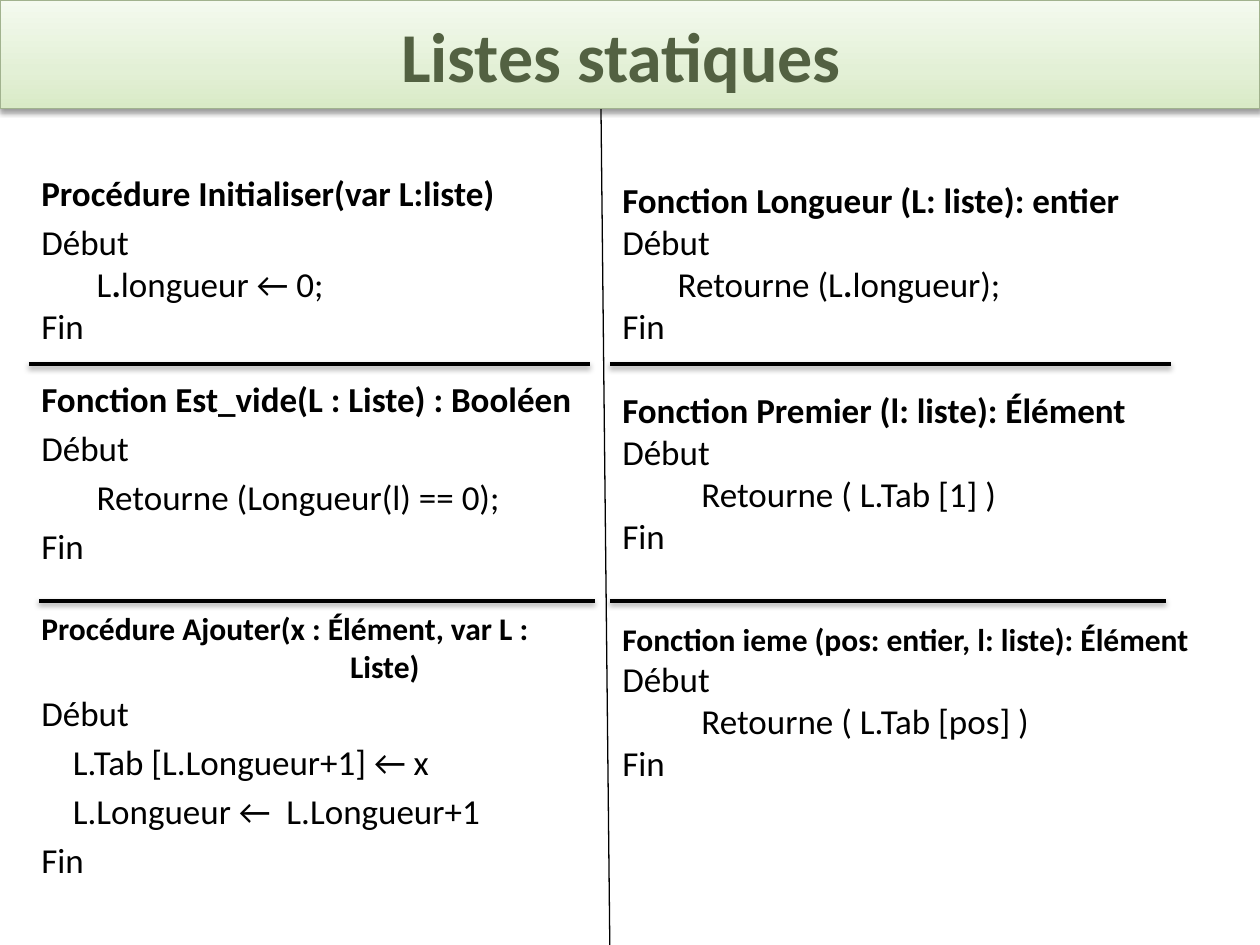
import pptx
import pptx.util
import pptx.dml.color
import pptx.enum.shapes
import pptx.enum.text
from lxml import etree

Inches, Pt = pptx.util.Inches, pptx.util.Pt
A = "http://schemas.openxmlformats.org/drawingml/2006/main"


def color(value):
    return pptx.dml.color.RGBColor.from_string(value)


def add_xml(parent, xml):
    parent.append(etree.fromstring(xml.replace(">", f' xmlns:a="{A}">', 1)))


def apply(target, values):
    for name, value in values.items():
        setattr(target, name, value)


class Deck:
    FONT = "Calibri"
    INK = "000000"
    HANG = 0.38
    SHADOW = (
        '<a:effectLst><a:outerShdw blurRad="39400" dist="20300" dir="5400000" rotWithShape="0">'
        '<a:srgbClr val="000000"><a:alpha val="38000"/></a:srgbClr>'
        "</a:outerShdw></a:effectLst>"
    )
    NO_SHADOW = "<a:effectLst></a:effectLst>"

    def __init__(self, width, height):
        self.prs = pptx.Presentation()
        apply(self.prs, {"slide_width": Inches(width), "slide_height": Inches(height)})
        self.s = self.prs.slides.add_slide(self.prs.slide_layouts[6])

    def run(self, p, text, size, bold, ink=INK):
        r = p.add_run()
        r.text = text
        apply(r.font, {"name": self.FONT, "size": Pt(size), "bold": bold})
        r.font.color.rgb = color(ink)

    def title(self, text, width, height, stops, edge, ink):
        sp = self.s.shapes.add_shape(
            pptx.enum.shapes.MSO_SHAPE.RECTANGLE, 0, 0, Inches(width), Inches(height))
        spPr = sp._element.spPr
        gs = "".join(f'<a:gs pos="{pos * 1000}"><a:srgbClr val="{c}"/></a:gs>' for pos, c in stops)
        add_xml(spPr, f'<a:gradFill><a:gsLst>{gs}</a:gsLst><a:lin ang="16200000" scaled="0"/></a:gradFill>')
        sp.line.color.rgb = color(edge)
        sp.line.width = Pt(0.75)
        add_xml(spPr, self.SHADOW)
        tf = sp.text_frame
        apply(tf, {"word_wrap": True, "margin_right": Inches(0.24),
                   "vertical_anchor": pptx.enum.text.MSO_ANCHOR.MIDDLE})
        p = tf.paragraphs[0]
        p.alignment = pptx.enum.text.PP_ALIGN.CENTER
        self.run(p, text, 40, True, ink)

    def code(self, left, top, width, height, lines):
        """Each line is (text, space before, options); ** switches bold."""
        tf = self.s.shapes.add_textbox(*map(Inches, (left, top, width, height))).text_frame
        tf.word_wrap = True
        for i, (text, before, opts) in enumerate(lines):
            p = tf.add_paragraph() if i else tf.paragraphs[0]
            hang = Inches(opts.get("hang", self.HANG))
            pPr = p._p.get_or_add_pPr()
            pPr.set("marL", str(hang))
            pPr.set("indent", str(-hang))
            p.space_before = Pt(before)
            for j, part in enumerate(text.split("**")):
                if part:
                    self.run(p, part, opts.get("size", 20), j % 2 == 1)

    def line(self, x1, y1, x2, y2, width, shadow):
        c = self.s.shapes.add_connector(
            pptx.enum.shapes.MSO_CONNECTOR.STRAIGHT, *map(Inches, (x1, y1, x2, y2)))
        c.line.color.rgb = color(self.INK)
        c.line.width = Pt(width)
        add_xml(c._element.spPr, self.SHADOW if shadow else self.NO_SHADOW)


def main():
    deck = Deck(10, 7.5)

    # Left column: initialise, test for empty, add
    deck.code(0.23, 1.31, 4.53, 6.09, [
        ("**Procédure Initialiser(var L:liste)**", 0, {}),
        ("Début", 4, {}),
        ("       L**.**longueur ← 0;", 0, {}),
        ("Fin", 0, {}),
        ("**Fonction Est_vide(L : Liste) : Booléen**", 18, {}),
        ("Début", 4, {}),
        ("       Retourne (Longueur(l) == 0);", 4, {}),
        ("Fin", 4, {}),
        ("**Procédure Ajouter(x : Élément, var L : Liste)**", 24, {"size": 18, "hang": 2.45}),
        ("Début", 4, {}),
        ("    L.Tab [L.Longueur+1] ← x", 4, {}),
        ("    L.Longueur ←  L.Longueur+1", 4, {}),
        ("Fin", 4, {}),
    ])

    # Right column: length, first element, i-th element
    deck.code(4.84, 1.37, 4.92, 6.13, [
        ("**Fonction Longueur (L: liste): entier**", 0, {}),
        ("Début", 0, {}),
        ("       Retourne (L**.**longueur);", 0, {}),
        ("Fin", 0, {}),
        ("**Fonction Premier (l: liste): Élément**", 24, {}),
        ("Début", 0, {}),
        ("          Retourne ( L.Tab [1] )", 0, {}),
        ("Fin", 0, {}),
        ("**Fonction ieme (pos: entier, l: liste): Élément**", 36, {"size": 18, "hang": 0}),
        ("Début", 0, {"hang": 0}),
        ("          Retourne ( L.Tab [pos] )", 0, {}),
        ("Fin", 0, {}),
    ])

    # Rules between the blocks, and the column divider
    for y, spans in ((2.89, ((0.23, 4.68), (4.84, 9.29))), (4.77, ((0.31, 4.72), (4.84, 9.25)))):
        for x1, x2 in spans:
            deck.line(x1, y, x2, y, 2, True)
    deck.line(4.77, 0.86, 4.84, 7.5, 0.75, False)

    # Title band
    deck.title("Listes statiques", 10, 0.86,
               ((0, "D9EAC6"), (35, "E3F0D6"), (100, "F4FAEF")), "A1B28E", "536142")

    deck.prs.save("out.pptx")


if __name__ == "__main__":
    main()
